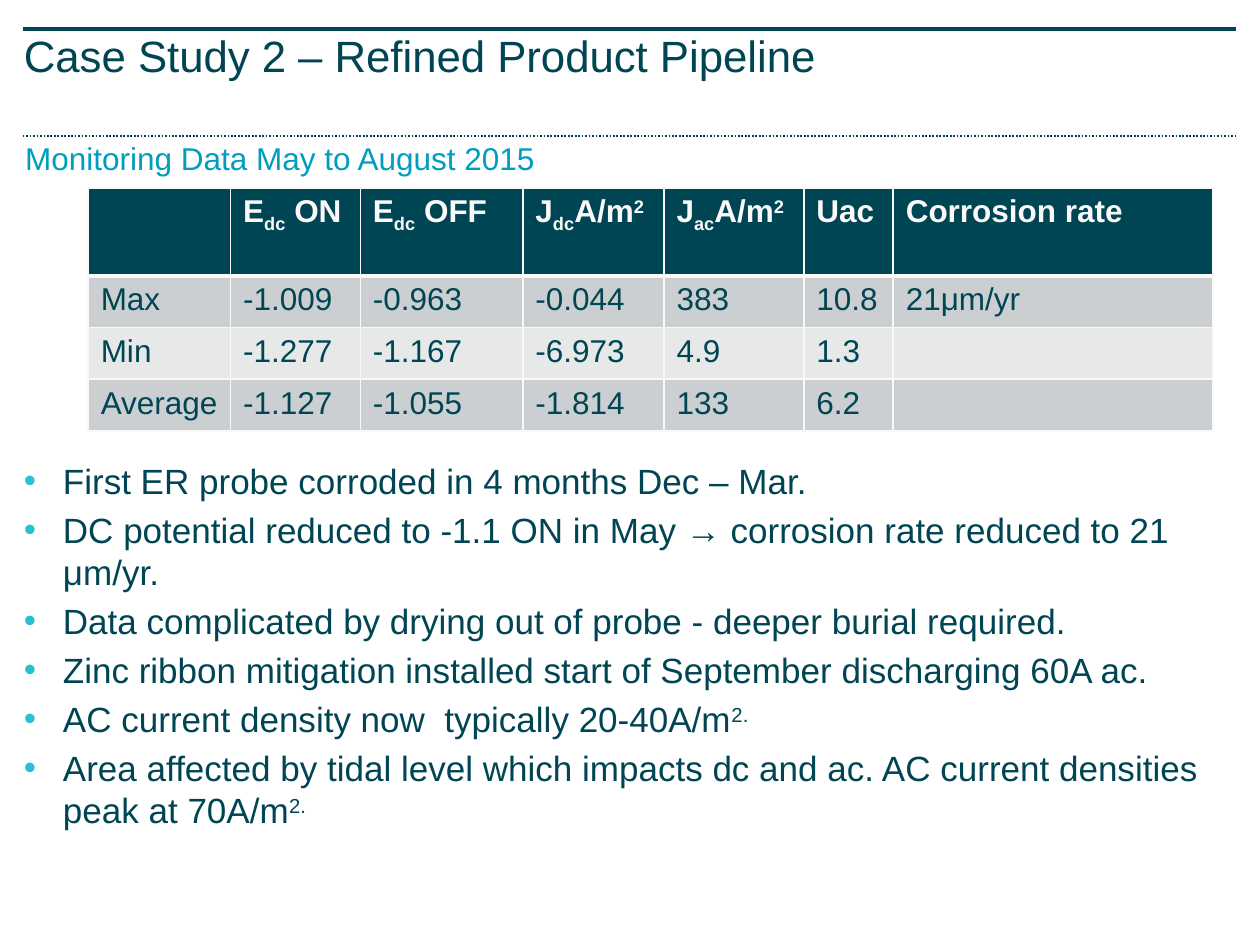
import pptx
import pptx.dml.color
import pptx.enum.dml
import pptx.enum.shapes
import pptx.oxml
import pptx.oxml.ns
import pptx.util
from pptx.util import Inches

NAMESPACE = pptx.oxml.ns.nsdecls("a")
DARK, CYAN, BULLET, PALE = "004553", "009EBE", "29C0D2", "FAF9F8"
BANDS = ["CCCFD1", "E7E9E9"]
SUB, SUPER = -25, 30
COLUMNS = [1.13, 1.03, 1.29, 1.12, 1.11, 0.71, 2.54]
ROWS = [0.7, 0.41, 0.41, 0.41]
HEADER = [
    [],
    [("E", 0), ("dc", SUB), (" ON", 0)],
    [("E", 0), ("dc", SUB), (" OFF", 0)],
    [("J", 0), ("dc", SUB), ("A/m", 0), ("2", SUPER)],
    [("J", 0), ("ac", SUB), ("A/m", 0), ("2", SUPER)],
    [("Uac", 0)],
    [("Corrosion rate", 0)],
]
READINGS = [
    ["Max", "-1.009", "-0.963", "-0.044", "383", "10.8", "21μm/yr"],
    ["Min", "-1.277", "-1.167", "-6.973", "4.9", "1.3", ""],
    ["Average", "-1.127", "-1.055", "-1.814", "133", "6.2", ""],
]
FINDINGS = [
    [("First ER probe corroded in 4 months Dec – Mar.", 0)],
    [("DC potential reduced to -1.1 ON in May → corrosion rate reduced to 21 μm/yr.", 0)],
    [("Data complicated by drying out of probe - deeper burial required.", 0)],
    [("Zinc ribbon mitigation installed start of September discharging 60A ac.", 0)],
    [("AC current density now  typically 20-40A/m", 0), ("2.", SUPER)],
    [("Area affected by tidal level which impacts dc and ac. "
      "AC current densities peak at 70A/m", 0), ("2.", SUPER)],
]


def colour(value):
    return pptx.dml.color.RGBColor.from_string(value)


def add_element(parent, tag, attributes="", content=""):
    parent.append(pptx.oxml.parse_xml(
        f"<a:{tag} {NAMESPACE} {attributes}>{content}</a:{tag}>"))


def add_spans(para, spans, size, value, bold=False):
    for text, baseline in spans:
        span = para.add_run()
        span.text = text
        span.font.name = "Arial"
        span.font.size = pptx.util.Pt(size)
        span.font.bold = bold
        span.font.color.rgb = colour(value)
        if baseline:
            span.font._element.set("baseline", str(baseline * 1000))


def add_text_frame(page, left, top, width, height):
    frame = page.shapes.add_textbox(left, top, width, height).text_frame
    frame.word_wrap = True
    frame.margin_left = frame.margin_top = frame.margin_right = frame.margin_bottom = 0
    return frame


def add_heading(page, left, top, width, height, text, size, value):
    frame = add_text_frame(page, left, top, width, height)
    add_spans(frame.paragraphs[0], [(text, 0)], size, value)


def add_rule(page, left, top, width, weight, dash=None):
    rule = page.shapes.add_connector(
        pptx.enum.shapes.MSO_CONNECTOR.STRAIGHT, left, top, left + width, top)
    rule.line.color.rgb = colour(DARK)
    rule.line.width = pptx.util.Pt(weight)
    if dash:
        rule.line.dash_style = dash
    add_element(rule._element.spPr, "effectLst")


def style_cell(cell, spans, fill, value, bold, bottom_weight):
    add_spans(cell.text_frame.paragraphs[0], spans, 18, value, bold)
    properties = cell._tc.get_or_add_tcPr()
    for side in "LRTB":
        weight = pptx.util.Pt(bottom_weight if side == "B" else 1)
        add_element(properties, f"ln{side}", f'w="{weight}"',
                    f'<a:solidFill><a:srgbClr val="{PALE}"/></a:solidFill>')
    cell.fill.solid()
    cell.fill.fore_color.rgb = colour(fill)


def add_readings_table(page, left, top, width, height):
    table = page.shapes.add_table(
        len(ROWS), len(COLUMNS), left, top, width, height).table
    for column, column_width in zip(table.columns, COLUMNS):
        column.width = Inches(column_width)
    for row, row_height in zip(table.rows, ROWS):
        row.height = Inches(row_height)
    for index, spans in enumerate(HEADER):
        style_cell(table.cell(0, index), spans, DARK, PALE, True, 3)
    for number, readings in enumerate(READINGS):
        for index, text in enumerate(readings):
            spans = [(text, 0)] if text else []
            cell = table.cell(number + 1, index)
            style_cell(cell, spans, BANDS[number % 2], DARK, False, 1)
    for index in range(len(COLUMNS)):
        top_line = table.cell(1, index)._tc.tcPr.find(pptx.oxml.ns.qn("a:lnT"))
        top_line.set("w", str(pptx.util.Pt(3)))


def add_findings(page, left, top, width, height):
    frame = add_text_frame(page, left, top, width, height)
    for index, spans in enumerate(FINDINGS):
        para = frame.add_paragraph() if index else frame.paragraphs[0]
        properties = para._p.get_or_add_pPr()
        properties.set("marL", str(Inches(0.31)))
        properties.set("indent", str(-Inches(0.31)))
        if index:
            para.space_before = pptx.util.Pt(4)
        add_element(properties, "buClr", content=f'<a:srgbClr val="{BULLET}"/>')
        add_element(properties, "buFont", 'typeface="Arial"')
        add_element(properties, "buChar", 'char="•"')
        add_spans(para, spans, 20, DARK)


def main():
    deck = pptx.Presentation()
    deck.slide_width, deck.slide_height = Inches(10), Inches(7.5)
    page = deck.slides.add_slide(deck.slide_layouts[6])
    add_rule(page, Inches(0.18), Inches(1.08), Inches(9.63), 1,
             pptx.enum.dml.MSO_LINE.ROUND_DOT)
    add_rule(page, Inches(0.18), Inches(0.23), Inches(9.63), 2)
    add_heading(page, Inches(0.19), Inches(0.23), Inches(8.9), Inches(0.87),
                "Case Study 2 – Refined Product Pipeline", 25, DARK)
    add_heading(page, Inches(0.2), Inches(1.1), Inches(9.61), Inches(0.39),
                "Monitoring Data May to August 2015", 18, CYAN)
    add_readings_table(page, Inches(0.7), Inches(1.49), Inches(8.93), Inches(1.93))
    add_findings(page, Inches(0.19), Inches(3.65), Inches(9.44), Inches(2.77))
    deck.save("out.pptx")


if __name__ == "__main__":
    main()
